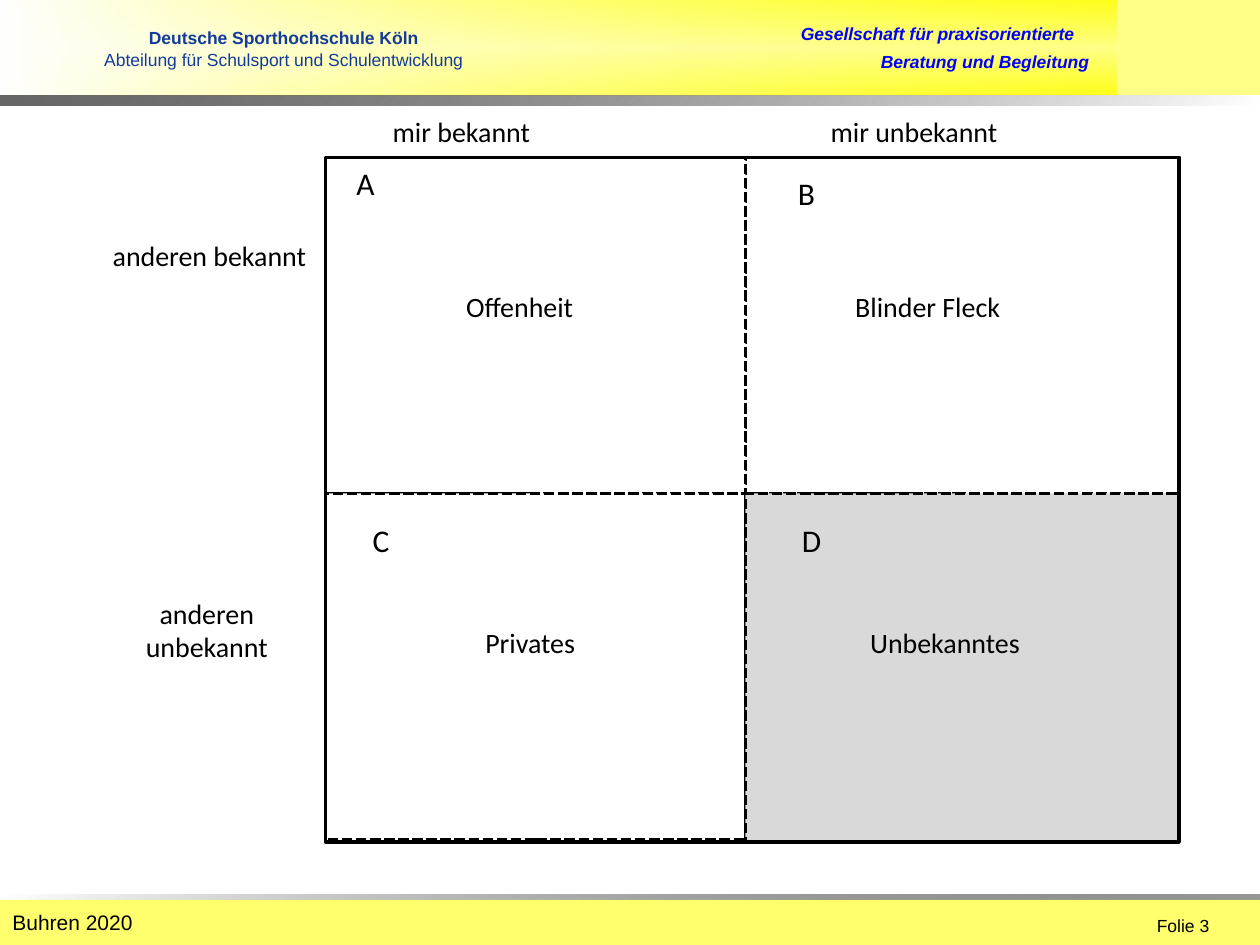
from dataclasses import dataclass

from lxml import etree
from pptx import Presentation
from pptx.dml.color import RGBColor
from pptx.enum.dml import MSO_LINE
from pptx.enum.shapes import MSO_SHAPE
from pptx.enum.text import PP_ALIGN
from pptx.oxml.ns import qn
from pptx.util import Inches, Length, Pt

RECTANGLE = MSO_SHAPE.RECTANGLE
DASH = MSO_LINE.SQUARE_DOT
LEFT, CENTER = PP_ALIGN.LEFT, PP_ALIGN.CENTER
COLUMNS, ROWS = 120, 90
BLACK, WHITE, YELLOW, GRAY = "000000", "FFFFFF", "FFFF00", "D9D9D9"
BLUE, NAVY = "0000FF", "133C9A"


@dataclass
class Area:
    column: float
    row: float
    columns: float
    rows: float

    def lengths(self) -> list[Length]:
        return [Inches(value / 12) for value in (self.column, self.row, self.columns, self.rows)]


@dataclass
class Stop:
    position: int
    color: str
    opacity: int = 100


@dataclass
class Band:
    area: Area
    stops: list[Stop]
    angle: int
    rotation: int = 0


@dataclass
class Quadrant:
    area: Area
    fill: str


@dataclass
class Label:
    text: str
    area: Area
    size: float = 16
    font: str = "Calibri"
    color: str = BLACK
    alignment: PP_ALIGN = CENTER
    bold: bool = False
    italic: bool = False


def rgb(color: str) -> RGBColor:
    return RGBColor.from_string(color)


def set_opacity(color_element, opacity: int) -> None:
    if opacity < 100:
        etree.SubElement(color_element, qn("a:alpha"), val=str(opacity * 1000))


def add_rectangle(slide, area: Area):
    shape = slide.shapes.add_shape(RECTANGLE, *area.lengths())
    shape.shadow.inherit = False
    shape.line.fill.background()
    return shape


def add_band(slide, band: Band) -> None:
    shape = add_rectangle(slide, band.area)
    shape.rotation = band.rotation
    shape.fill.gradient()
    gradient = shape._element.spPr.find(qn("a:gradFill"))
    for child in list(gradient):
        gradient.remove(child)
    stop_list = etree.SubElement(gradient, qn("a:gsLst"))
    for stop in band.stops:
        element = etree.SubElement(stop_list, qn("a:gs"), pos=str(stop.position * 1000))
        color = etree.SubElement(element, qn("a:srgbClr"), val=stop.color)
        set_opacity(color, stop.opacity)
    etree.SubElement(gradient, qn("a:lin"), ang=str(band.angle * 60000), scaled="1")


def add_footer(slide, area: Area) -> None:
    shape = add_rectangle(slide, area)
    shape.fill.solid()
    shape.fill.fore_color.rgb = rgb(YELLOW)
    set_opacity(shape._element.spPr.find(qn("a:solidFill"))[0], 57)


def outline(shape) -> None:
    shape.line.color.rgb = rgb(BLACK)
    shape.line.width = Pt(2)


def add_quadrant(slide, quadrant: Quadrant) -> None:
    shape = add_rectangle(slide, quadrant.area)
    shape.fill.solid()
    shape.fill.fore_color.rgb = rgb(quadrant.fill)
    outline(shape)
    shape.line.dash_style = DASH


def add_frame(slide, area: Area) -> None:
    shape = add_rectangle(slide, area)
    shape.fill.background()
    outline(shape)


def format_paragraph(paragraph, label: Label) -> None:
    paragraph.alignment = label.alignment
    font = paragraph.font
    font.name, font.size = label.font, Pt(label.size)
    font.bold, font.italic = label.bold, label.italic
    font.color.rgb = rgb(label.color)


def add_label(slide, label: Label):
    frame = slide.shapes.add_textbox(*label.area.lengths()).text_frame
    frame.word_wrap = True
    paragraph = frame.paragraphs[0]
    paragraph.text = label.text
    format_paragraph(paragraph, label)
    return frame


def add_institution(slide) -> None:
    area = Area(5, 3, 44, 4.8)
    name = Label("Deutsche Sporthochschule Köln", area, 10, "Arial", NAVY, bold=True)
    department = Label("Abteilung für Schulsport und Schulentwicklung", area, 10, "Arial", NAVY)
    frame = add_label(slide, name)
    paragraph = frame.add_paragraph()
    paragraph.text = department.text
    format_paragraph(paragraph, department)
    paragraph.space_before = Pt(8)
    for line in frame.paragraphs:
        line.line_spacing = 0.4


LEFT_EDGE, MIDDLE, RIGHT_EDGE = 31, 71, 112.3
TOP_EDGE, CENTER_ROW, BOTTOM_EDGE = 15, 47, 80.2
LEFT_WIDTH, RIGHT_WIDTH = MIDDLE - LEFT_EDGE, RIGHT_EDGE - MIDDLE
UPPER_HEIGHT, LOWER_HEIGHT = CENTER_ROW - TOP_EDGE, BOTTOM_EDGE - CENTER_ROW
HEADER_ROWS, FOOTER_ROW = 9.1, 85.7

BANDS = [
    Band(Area(0, 0, 106.3, HEADER_ROWS),
         [Stop(0, YELLOW, 91), Stop(50, WHITE), Stop(100, YELLOW, 91)], 90),
    Band(Area(0, 0, COLUMNS, HEADER_ROWS), [Stop(0, YELLOW, 47), Stop(100, WHITE)], 0, 180),
    Band(Area(0, HEADER_ROWS, COLUMNS, 1), [Stop(0, BLACK, 60), Stop(100, WHITE)], 45),
    Band(Area(0, FOOTER_ROW - 0.5, COLUMNS, 0.5), [Stop(0, BLACK, 41), Stop(100, WHITE)], 45, 180),
]
QUADRANTS = [
    Quadrant(Area(MIDDLE, TOP_EDGE, RIGHT_WIDTH, UPPER_HEIGHT), WHITE),
    Quadrant(Area(LEFT_EDGE, TOP_EDGE, LEFT_WIDTH, UPPER_HEIGHT), WHITE),
    Quadrant(Area(LEFT_EDGE, CENTER_ROW, LEFT_WIDTH, LOWER_HEIGHT - 0.2), WHITE),
    Quadrant(Area(MIDDLE, CENTER_ROW, RIGHT_WIDTH, LOWER_HEIGHT), GRAY),
]
LABELS = [
    Label("Gesellschaft für praxisorientierte", Area(75.1, 1.6, 32.2, 3.2), 10, "Arial", BLUE,
          LEFT, True, True),
    Label("Beratung und Begleitung", Area(82.7, 4.3, 24.6, 3.2), 10, "Arial", BLUE,
          LEFT, True, True),
    Label("Folie 3", Area(109, 86.6, 11, 3.2), 10, "Arial", alignment=LEFT),
    Label("Buhren 2020", Area(0, 86, 62, 4), 12, "Arial", alignment=LEFT),
    Label("D", Area(74, 49, 6.6, 4.8), 18),
    Label("A", Area(31, 15, 7.6, 4.8), 18),
    Label("B", Area(73, 16, 7.6, 4.8), 18),
    Label("C", Area(33, 49, 6.6, 4.8), 18),
    Label("Offenheit", Area(41, 27, 17, 4.4)),
    Label("Blinder Fleck", Area(77, 27, 22.7, 4.4)),
    Label("Privates", Area(42, 59, 17, 4.4)),
    Label("Unbekanntes", Area(74, 59, 32, 4.4)),
    Label("mir unbekannt", Area(67.2, 10.3, 39.7, 4.4)),
    Label("mir bekannt", Area(29.8, 10.3, 28.3, 4.4)),
    Label("anderen bekannt", Area(8.6, 22.1, 22.7, 4.4)),
    Label("anderen unbekannt", Area(11.2, 56.2, 17, 7.7)),
]


def main() -> None:
    presentation = Presentation()
    presentation.slide_width = Inches(COLUMNS / 12)
    presentation.slide_height = Inches(ROWS / 12)
    slide = presentation.slides.add_slide(presentation.slide_layouts[6])
    for band in BANDS:
        add_band(slide, band)
    add_footer(slide, Area(0, FOOTER_ROW, COLUMNS, ROWS - FOOTER_ROW))
    add_institution(slide)
    for quadrant in QUADRANTS:
        add_quadrant(slide, quadrant)
    add_frame(slide, Area(LEFT_EDGE, TOP_EDGE, RIGHT_EDGE - LEFT_EDGE, BOTTOM_EDGE - TOP_EDGE))
    for label in LABELS:
        add_label(slide, label)
    presentation.save("out.pptx")


if __name__ == "__main__":
    main()
